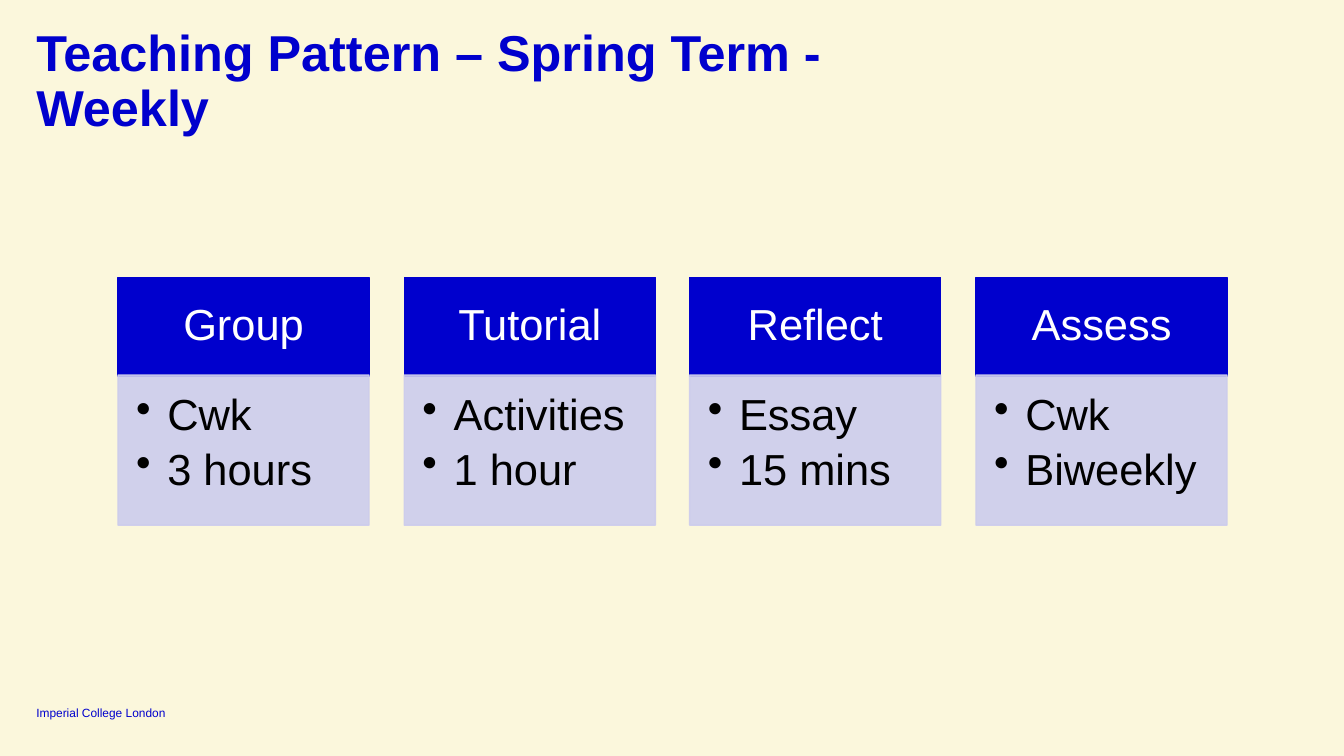
"""Build the weekly spring-term teaching pattern slide."""
from dataclasses import dataclass

from lxml import etree
from pptx import Presentation
from pptx import util as u
from pptx.dml.color import RGBColor
from pptx.enum import shapes, text
from pptx.oxml.ns import qn


@dataclass(frozen=True)
class Theme:
    font: str = "Arial"
    cream: str = "FBF7DC"
    blue: str = "0000CD"
    lavender: str = "CCCCED"
    white: str = "FFFFFF"
    black: str = "000000"
    title_size: float = 36
    card_size: float = 31
    footer_size: float = 8.5


class TeachingSlide:
    def __init__(self, deck, theme):
        self.theme = theme
        self.slide = deck.slides.add_slide(deck.slide_layouts[5])
        self.paint(self.slide.background.fill, theme.cream)

    def paint(self, fill, color, alpha=None):
        fill.solid()
        fill.fore_color.rgb = RGBColor.from_string(color)
        if alpha:
            tint = fill._xPr.find(qn("a:solidFill"))[0]
            etree.SubElement(tint, qn("a:alpha")).set("val", str(alpha * 1000))

    def frame(self, holder, insets, anchor):
        body = holder.text_frame
        body.word_wrap = True
        body.auto_size = text.MSO_AUTO_SIZE.NONE
        body.vertical_anchor = anchor
        (body.margin_left, body.margin_top,
         body.margin_right, body.margin_bottom) = map(u.Inches, insets)
        return body

    def style(self, paragraph, size, color, align=text.PP_ALIGN.LEFT, bold=False):
        paragraph.alignment = align
        paragraph.line_spacing = 0.9
        paragraph.font.name = self.theme.font
        paragraph.font.size = u.Pt(size)
        paragraph.font.bold = bold
        paragraph.font.color.rgb = RGBColor.from_string(color)

    def title(self, wording, left, top, width, height):
        heading = self.slide.shapes.title
        heading.left, heading.top = u.Inches(left), u.Inches(top)
        heading.width, heading.height = u.Inches(width), u.Inches(height)
        body = self.frame(heading, (0, 0, 0, 0), text.MSO_ANCHOR.TOP)
        body.text = wording
        self.style(body.paragraphs[0], self.theme.title_size, self.theme.blue, bold=True)

    def footer(self, wording, left, top, width, height):
        college = self.slide.shapes.add_textbox(*map(u.Inches, (left, top, width, height)))
        body = self.frame(college, (0, 0, 0, 0), text.MSO_ANCHOR.BOTTOM)
        body.text = wording
        self.style(body.paragraphs[0], self.theme.footer_size, self.theme.blue)
        body.paragraphs[0].line_spacing = 1.0

    def panel(self, box, color, alpha=None):
        panel = self.slide.shapes.add_shape(
            shapes.MSO_SHAPE.RECTANGLE, *map(u.Inches, box))
        panel.shadow.inherit = False
        self.paint(panel.fill, color, alpha)
        self.paint(panel.line.fill, color, alpha)
        panel.line.width = u.Pt(1)
        return panel

    def card_header(self, wording, *box):
        header = self.panel(box, self.theme.blue)
        body = self.frame(header, (0.24, 0.14, 0.24, 0.14), text.MSO_ANCHOR.MIDDLE)
        body.text = wording
        self.style(body.paragraphs[0], self.theme.card_size, self.theme.white,
                   text.PP_ALIGN.CENTER)

    def card_list(self, items, *box):
        details = self.panel(box, self.theme.lavender, 90)
        body = self.frame(details, (0.18, 0.18, 0.24, 0.27), text.MSO_ANCHOR.TOP)
        body.text = "\n".join(items)
        for item in body.paragraphs:
            props = item._p.get_or_add_pPr()
            props.set("marL", str(u.Inches(0.31)))
            props.set("indent", str(-u.Inches(0.31)))
            etree.SubElement(props, qn("a:buChar")).set("char", "•")
            self.style(item, self.theme.card_size, self.theme.black)
            item.space_after = u.Pt(5.5)


def main():
    deck = Presentation()
    deck.slide_width, deck.slide_height = u.Inches(13.33), u.Inches(7.5)
    page = TeachingSlide(deck, Theme())
    page.footer("Imperial College London", 0.36, 6.99, 1.55, 0.15)

    activities = {
        "Group": ("Cwk", "3 hours"),
        "Tutorial": ("Activities", "1 hour"),
        "Reflect": ("Essay", "15 mins"),
        "Assess": ("Cwk", "Biweekly"),
    }
    first_left, pitch, width = 1.17, 2.837, 2.49
    for column, (activity, details) in enumerate(activities.items()):
        left = round(first_left + column * pitch, 2)
        page.card_header(activity, left, 2.75, width, 0.98)
        page.card_list(details, left, 3.72, width, 1.49)

    page.title("Teaching Pattern – Spring Term - Weekly", 0.36, 0.28, 9.3, 0.58)
    deck.save("out.pptx")


if __name__ == "__main__":
    main()
